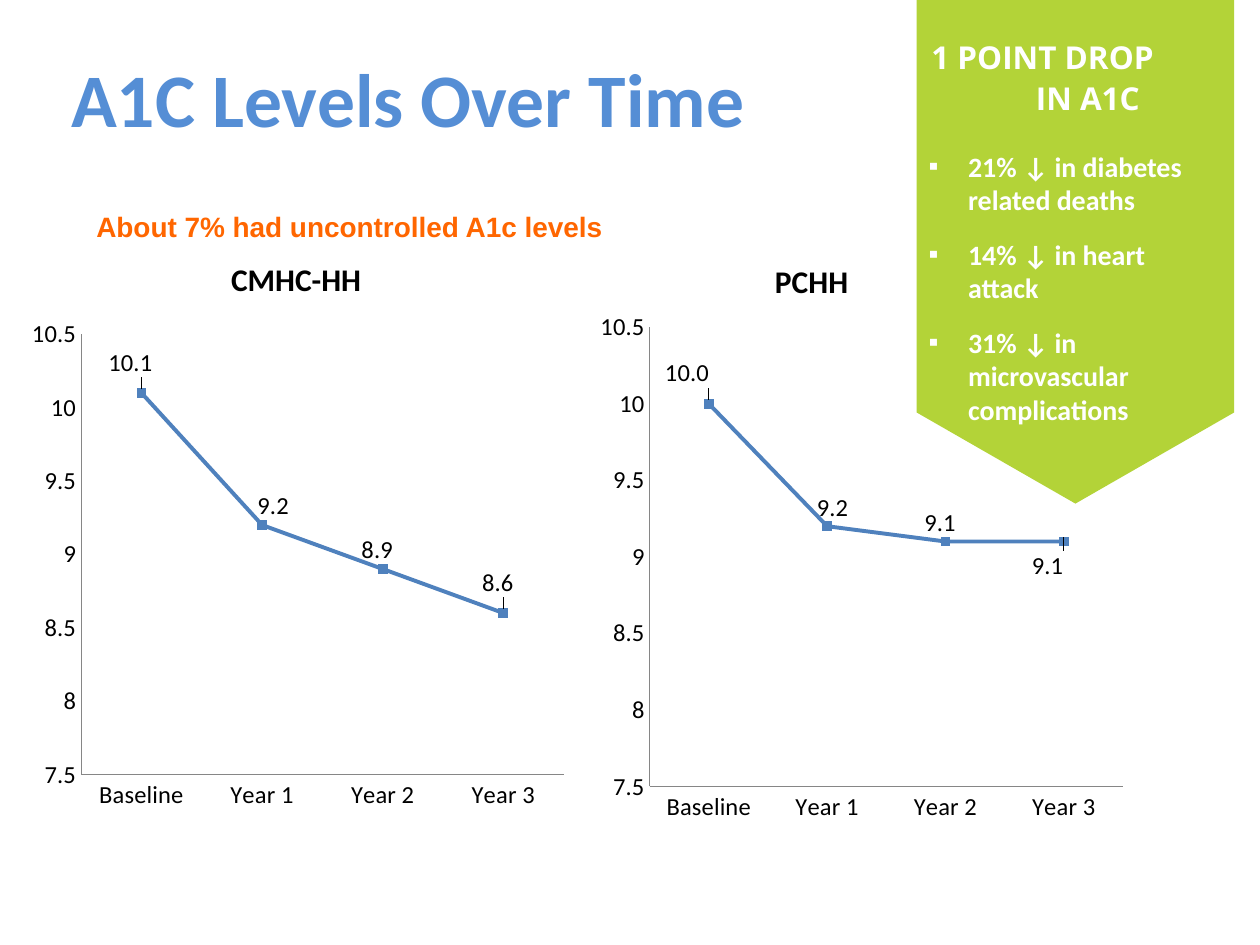
from lxml.etree import SubElement
from pptx import Presentation
from pptx.chart.data import CategoryChartData
from pptx.dml.color import RGBColor
from pptx.enum.chart import XL_CHART_TYPE as ChartType, XL_LABEL_POSITION as LabelPosition
from pptx.enum.chart import XL_MARKER_STYLE as MarkerStyle, XL_TICK_MARK as TickMark
from pptx.enum.shapes import MSO_SHAPE as Shape
from pptx.enum.text import MSO_ANCHOR as Anchor, MSO_AUTO_SIZE as AutoSize, PP_ALIGN as Align
from pptx.oxml import parse_xml
from pptx.oxml.ns import nsdecls, qn
from pptx.util import Pt

BLUE = RGBColor(0x55, 0x8E, 0xD5)
ORANGE = RGBColor(0xFF, 0x66, 0x00)
GREEN = RGBColor(0xB3, 0xD3, 0x38)
WHITE = RGBColor(0xFF, 0xFF, 0xFF)
BLACK = RGBColor(0, 0, 0)
LINE_BLUE = RGBColor(0x4F, 0x81, 0xBD)
AXIS_GRAY = RGBColor(0x86, 0x86, 0x86)

CATEGORIES = ["Baseline", "Year 1", "Year 2", "Year 3"]
FACTS = [
    "21% ↓ in diabetes related deaths",
    "14% ↓ in heart attack",
    "31% ↓ in microvascular complications",
]
# Label offsets are fractions of the chart size, from a place above the point.
CHARTS = [
    {"title": "PCHH", "box": (337, 127.5, 311, 350), "values": [10.0, 9.2, 9.1, 9.1],
     "title_at": (0.33, 0.05), "plot": (0.11, 0.17, 0.87, 0.75),
     "offsets": [(-0.04, -0.01), (0.01, 0.01), (-0.01, 0.01), (-0.03, 0.08)]},
    {"title": "CMHC-HH", "box": (11.5, 134, 317, 335.5), "values": [10.1, 9.2, 8.9, 8.6],
     "title_at": (0.37, 0.03), "plot": (0.11, 0.17, 0.87, 0.75),
     "offsets": [(-0.02, -0.01), (0.02, 0.01), (-0.01, 0.01), (-0.01, -0.01)]},
]


def set_font(font, color, **values):
    for name, value in values.items():
        setattr(font, name, value)
    font.color.rgb = color


def place(shape, left, top, width, height):
    shape.left, shape.top = Pt(left), Pt(top)
    shape.width, shape.height = Pt(width), Pt(height)


def set_indent(paragraph, left, first, bullet=None):
    """Set the margins in points, and a bullet character or none."""
    properties = paragraph._p.get_or_add_pPr()
    properties.set("marL", str(Pt(left)))
    properties.set("indent", str(Pt(first)))
    if bullet:
        SubElement(properties, qn("a:buChar"), char=bullet)
    else:
        SubElement(properties, qn("a:buNone"))


def manual_layout(**values):
    """Build a layout from its settings, given in schema order."""
    layout = parse_xml(f"<c:layout {nsdecls('c')}><c:manualLayout/></c:layout>")
    for name, value in values.items():
        SubElement(layout[0], qn(f"c:{name}"), val=str(value))
    return layout


def set_layout(element, layout, after=None):
    """Put the layout behind the child named by after, or first."""
    for old in element.findall(qn("c:layout")):
        element.remove(old)
    if after is None:
        element.insert(0, layout)
    else:
        element.find(qn(after)).addnext(layout)


def add_title(slide):
    title = slide.shapes.title
    place(title, 33.5, 18, 404, 75.5)
    frame = title.text_frame
    frame.text = "A1C Levels Over Time"
    frame.auto_size, frame.vertical_anchor = AutoSize.NONE, Anchor.MIDDLE
    frame.paragraphs[0].alignment = Align.LEFT
    set_font(frame.paragraphs[0].font, BLUE, name="Calibri", size=Pt(43.2), bold=True)


def add_subtitle(slide):
    box = slide.shapes.add_textbox(Pt(48), Pt(116), Pt(318), Pt(26.5))
    box.text_frame.word_wrap = True
    paragraph = box.text_frame.paragraphs[0]
    paragraph.text = "About 7% had uncontrolled A1c levels"
    set_font(paragraph.font, ORANGE, name="Arial", size=Pt(16), bold=True)


def add_banner(slide):
    banner = slide.shapes.add_shape(Shape.PENTAGON, Pt(469.5), Pt(52), Pt(290), Pt(181.5))
    banner.adjustments[0] = 0.287
    banner.rotation = 90
    banner.shadow.inherit = False
    banner.fill.solid()
    banner.fill.fore_color.rgb = GREEN
    banner.line.fill.background()


def add_heading(paragraph):
    set_indent(paragraph, 56, -54.5)
    paragraph.space_before, paragraph.space_after = Pt(0), Pt(18)
    for text, size in (("1 POINT DROP", 18), (" ", 20), ("IN A1C", 18)):
        if text == " ":
            paragraph.add_line_break()
        run = paragraph.add_run()
        run.text = text
        set_font(run.font, WHITE, name="Open Sans", size=Pt(size), bold=True)


def add_facts(slide):
    body = slide.placeholders[1]
    slide.shapes._spTree.append(body._element)  # in front of the banner
    place(body, 523.5, 18, 181.5, 231)
    frame = body.text_frame
    frame.word_wrap, frame.auto_size = True, AutoSize.NONE
    add_heading(frame.paragraphs[0])
    for fact in FACTS:
        paragraph = frame.add_paragraph()
        paragraph.text = fact
        set_indent(paragraph, 22.5, -22.5, "▪")
        paragraph.space_before, paragraph.space_after = Pt(0), Pt(12)
        set_font(paragraph.font, WHITE, name="Calibri", size=Pt(16), bold=True)


def format_axis(axis):
    axis.major_tick_mark = axis.minor_tick_mark = TickMark.NONE
    axis.has_major_gridlines = False
    axis.format.line.color.rgb = AXIS_GRAY
    axis.format.line.width = Pt(0.75)
    set_font(axis.tick_labels.font, BLACK, name="Calibri", size=Pt(14))


def format_series(series, offsets):
    series.smooth = False
    series.format.line.color.rgb = LINE_BLUE
    series.format.line.width = Pt(2.25)
    marker = series.marker
    marker.style, marker.size = MarkerStyle.SQUARE, 5
    marker.format.fill.solid()
    marker.format.fill.fore_color.rgb = LINE_BLUE
    marker.format.line.color.rgb = LINE_BLUE
    for index, (x, y) in enumerate(offsets):
        label = series.points[index].data_label
        set_font(label.font, BLACK, name="Calibri", size=Pt(14))
        label.position = LabelPosition.ABOVE
        element = series._element.find(qn("c:dLbls")).findall(qn("c:dLbl"))[index]
        set_layout(element, manual_layout(x=x, y=y), "c:idx")
    hide_leader_lines(series._element.find(qn("c:dLbls")))


def hide_leader_lines(labels):
    for old in labels.findall(qn("c:showLeaderLines")):
        labels.remove(old)
    chart_2012 = "http://schemas.microsoft.com/office/drawing/2012/chart"
    labels.append(parse_xml(
        f'<c:extLst {nsdecls("c")}><c:ext uri="{{CE6537A1-D6FC-4f65-9D91-7224C49458BB}}" '
        f'xmlns:c15="{chart_2012}"><c15:showLeaderLines val="0"/></c:ext></c:extLst>'))


def add_line_chart(slide, title, box, values, title_at, plot, offsets):
    data = CategoryChartData(number_format="0.0")
    data.categories = CATEGORIES
    data.add_series("Series 1", values)
    chart = slide.shapes.add_chart(ChartType.LINE_MARKERS, *map(Pt, box), data).chart
    set_font(chart.font, BLACK, name="Calibri", size=Pt(10))
    chart.has_legend = False
    heading = chart.chart_title
    heading.text_frame.text = title
    set_font(heading.text_frame.paragraphs[0].font, BLACK, name="Calibri", size=Pt(18), bold=True)
    heading.include_in_layout = False
    edges = {"xMode": "edge", "yMode": "edge"}
    set_layout(heading._element, manual_layout(**edges, **dict(zip("xy", title_at))), "c:tx")

    for axis in (chart.category_axis, chart.value_axis):
        format_axis(axis)
    value_axis = chart.value_axis
    value_axis.minimum_scale, value_axis.maximum_scale = 7.5, 10.5
    value_axis.major_unit = 0.5
    value_axis.tick_labels.number_format = "General"
    value_axis.tick_labels.number_format_is_linked = False
    chart.plots[0].vary_by_categories = False
    format_series(chart.plots[0].series[0], offsets)

    chart_element = chart._chartSpace.find(qn("c:chart"))
    set_layout(chart_element.find(qn("c:plotArea")),
               manual_layout(layoutTarget="inner", **edges, **dict(zip("xywh", plot))))
    chart_element.addnext(
        parse_xml(f"<c:spPr {nsdecls('c', 'a')}><a:noFill/><a:ln><a:noFill/></a:ln></c:spPr>"))


def main():
    presentation = Presentation()
    presentation.slide_width, presentation.slide_height = Pt(720), Pt(540)
    slide = presentation.slides.add_slide(presentation.slide_layouts[1])
    add_banner(slide)
    add_title(slide)
    add_subtitle(slide)
    add_facts(slide)
    for chart in CHARTS:
        add_line_chart(slide, **chart)
    presentation.save("out.pptx")


if __name__ == "__main__":
    main()
